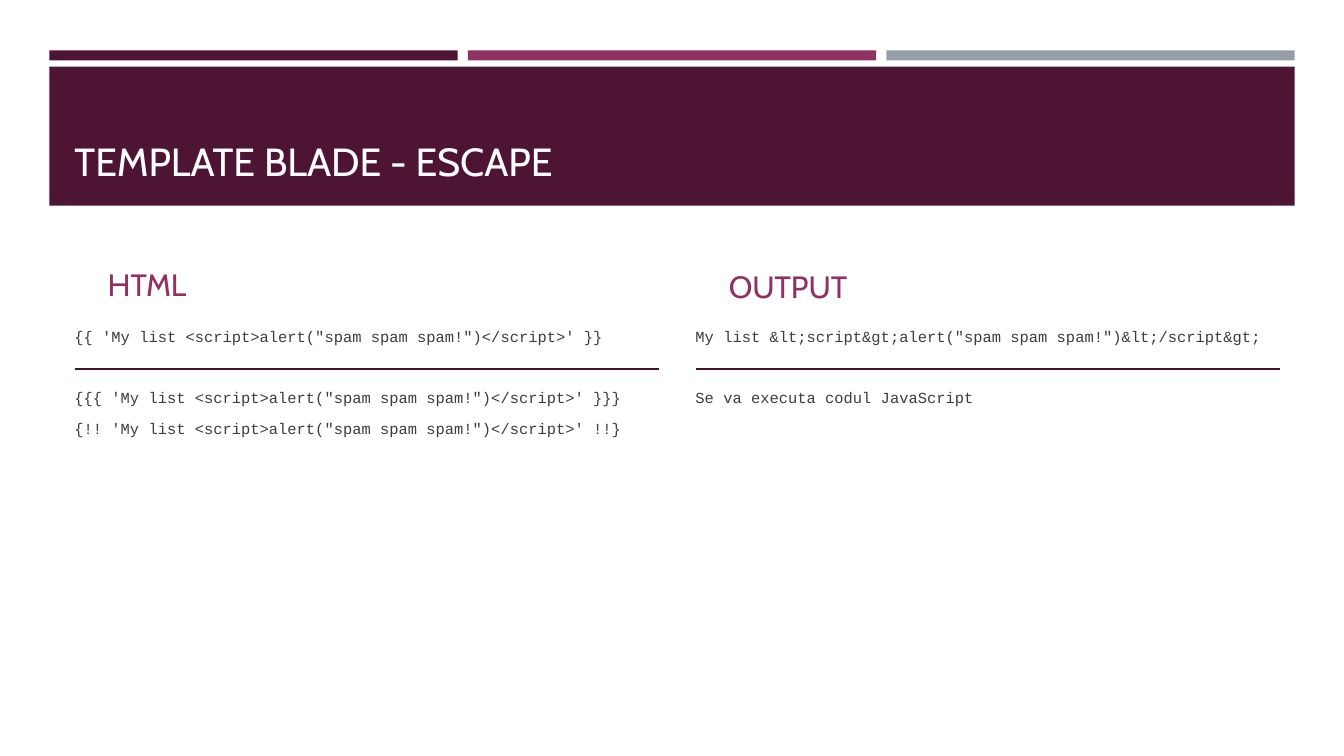
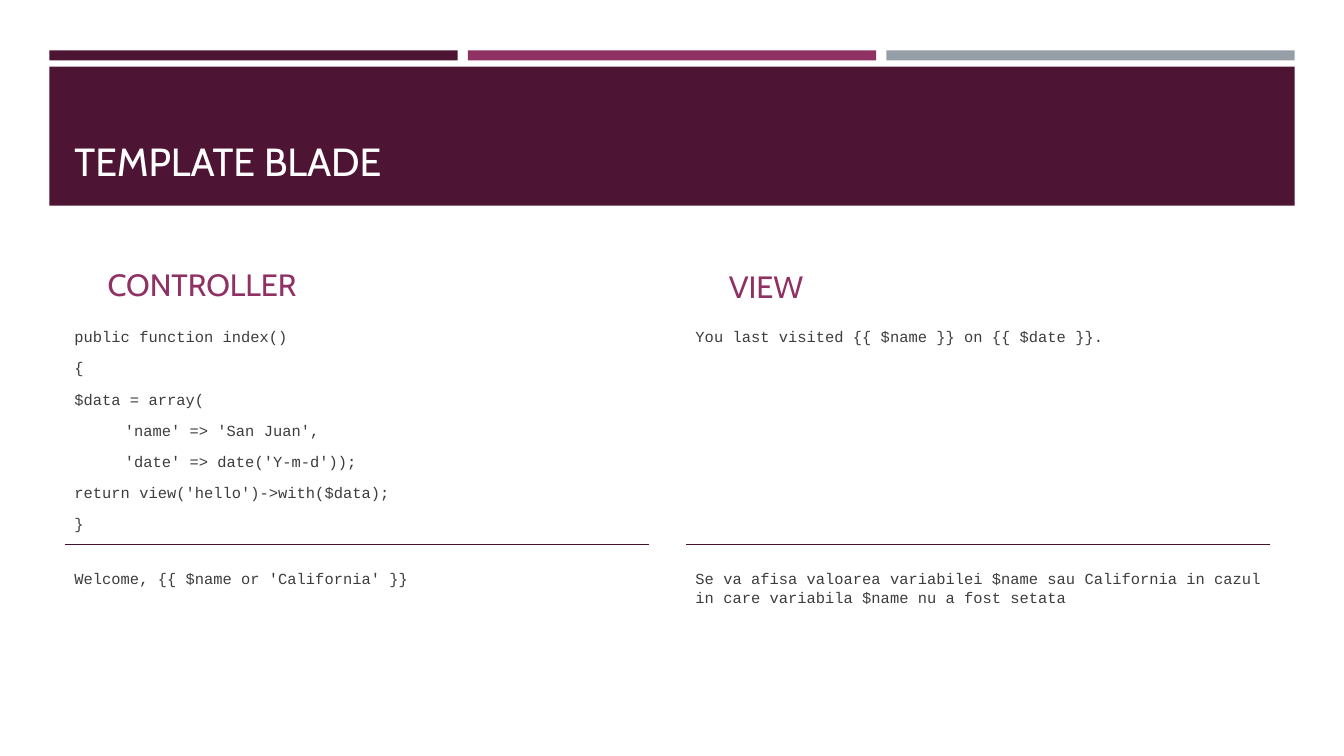
from pptx import Presentation
from pptx.dml.color import RGBColor
from pptx.enum.shapes import MSO_CONNECTOR, MSO_SHAPE
from pptx.enum.text import MSO_ANCHOR
from pptx.oxml.ns import qn
from pptx.util import Pt
from lxml import etree

EMU_PER_PX = 9144
RECTANGLE = MSO_SHAPE.RECTANGLE
STRAIGHT = MSO_CONNECTOR.STRAIGHT
TOP, BOTTOM = MSO_ANCHOR.TOP, MSO_ANCHOR.BOTTOM

PLUM, MAGENTA, GREY = "4D1434", "903163", "969FA7"
WHITE, INK, RULE = "FFFFFF", "3D3D3D", "45122F"
TITLE_STYLE = ("Cabin", 28, WHITE)
HEADING_STYLE = ("Cabin", 22, MAGENTA)
CODE_STYLE = ("Courier New", 11, INK)

BAND_LEFT, STRIPE_WIDTH, STRIPE_STEP = 49, 405, 415
COLUMN_LEFT, COLUMN_STEP, COLUMN_WIDTH = 64, 616, 590
CODE_TOP, ROW_HEIGHT, TAB_WIDTH = 320, 30, 50
RULE_LENGTH = 580

SLIDES = [
    {
        "title": "TEMPLATE BLADE - ESCAPE",
        "rule": (74, 366),
        "lower_row": 2,
        "columns": [
            ("HTML",
             ["{{ 'My list <script>alert(\"spam spam spam!\")</script>' }}"],
             ["{{{ 'My list <script>alert(\"spam spam spam!\")</script>' }}}",
              "{!! 'My list <script>alert(\"spam spam spam!\")</script>' !!}"]),
            ("OUTPUT",
             ["My list &lt;script&gt;alert(\"spam spam spam!\")&lt;/script&gt;"],
             ["Se va executa codul JavaScript"]),
        ],
    },
    {
        "title": "TEMPLATE BLADE",
        "rule": (64, 540),
        "lower_row": 8,
        "columns": [
            ("CONTROLLER",
             ["public function index()",
              "{",
              "$data = array(",
              "\t'name' => 'San Juan',",
              "\t'date' => date('Y-m-d'));",
              "return view('hello')->with($data);",
              "}"],
             ["Welcome, {{ $name or 'California' }}"]),
            ("VIEW",
             ["You last visited {{ $name }} on {{ $date }}."],
             ["Se va afisa valoarea variabilei $name sau California in cazul "
              "in care variabila $name nu a fost setata"]),
        ],
    },
]


def px(*lengths):
    """Turn pixel lengths into a list of EMU."""
    return [length * EMU_PER_PX for length in lengths]


def color(value):
    """Turn a hex string into a colour."""
    return RGBColor.from_string(value)


def add_band(slide, left, top, width, height, fill):
    """Add a plain filled rectangle."""
    shape = slide.shapes.add_shape(RECTANGLE, *px(left, top, width, height))
    shape.shadow.inherit = False
    shape.fill.solid()
    shape.fill.fore_color.rgb = color(fill)
    shape.line.fill.background()


def add_text(slide, box, lines, style, anchor=TOP, before=0, after=0):
    """Add a text box with one paragraph per line, indenting tabbed lines."""
    font_name, size, font_color = style
    text_frame = slide.shapes.add_textbox(*px(*box)).text_frame
    text_frame.word_wrap = True
    text_frame.vertical_anchor = anchor
    text_frame.text = "\n".join(line.lstrip("\t") for line in lines)
    for line, paragraph in zip(lines, text_frame.paragraphs):
        paragraph.space_before = Pt(before)
        paragraph.space_after = Pt(after)
        if line.startswith("\t"):
            indent = px(TAB_WIDTH)[0]
            paragraph._p.get_or_add_pPr().set("marL", str(indent))
        for run in paragraph.runs:
            run.font.name = font_name
            run.font.size = Pt(size)
            run.font.color.rgb = color(font_color)


def add_rule(slide, left, top):
    """Add a thin horizontal rule without shadow."""
    connector = slide.shapes.add_connector(
        STRAIGHT, *px(left, top, left + RULE_LENGTH, top))
    connector.line.color.rgb = color(RULE)
    connector.line.width = Pt(1)
    etree.SubElement(connector._element.spPr, qn("a:effectLst"))


def add_header(slide, title):
    """Add the three stripes, the title band and the title."""
    for index, fill in enumerate((PLUM, MAGENTA, GREY)):
        add_band(slide, BAND_LEFT + index * STRIPE_STEP, 50, STRIPE_WIDTH, 10, fill)
    add_band(slide, BAND_LEFT, 66, 2 * STRIPE_STEP + STRIPE_WIDTH, 138, PLUM)
    add_text(slide, (64, 80, 1206, 108), [title], TITLE_STYLE, BOTTOM)


def add_column(slide, index, column, lower_row, rule):
    """Add a heading, two code blocks and the rule between them."""
    heading, upper, lower = column
    offset = index * COLUMN_STEP
    left = COLUMN_LEFT + offset
    add_text(slide, (left + 33, 246, 556, 59 + 2 * index), [heading],
             HEADING_STYLE, BOTTOM, before=4, after=6)
    for row, lines in ((0, upper), (lower_row, lower)):
        box = (left, CODE_TOP + row * ROW_HEIGHT, COLUMN_WIDTH, len(lines) * ROW_HEIGHT)
        add_text(slide, box, lines, CODE_STYLE, before=3, after=6)
    rule_left, rule_top = rule
    add_rule(slide, rule_left + offset, rule_top)


def main():
    """Build and save the presentation."""
    presentation = Presentation()
    presentation.slide_width, presentation.slide_height = px(1333, 750)
    for content in SLIDES:
        slide = presentation.slides.add_slide(presentation.slide_layouts[6])
        add_header(slide, content["title"])
        for index, column in enumerate(content["columns"]):
            add_column(slide, index, column, content["lower_row"], content["rule"])
    presentation.save("out.pptx")


if __name__ == "__main__":
    main()
